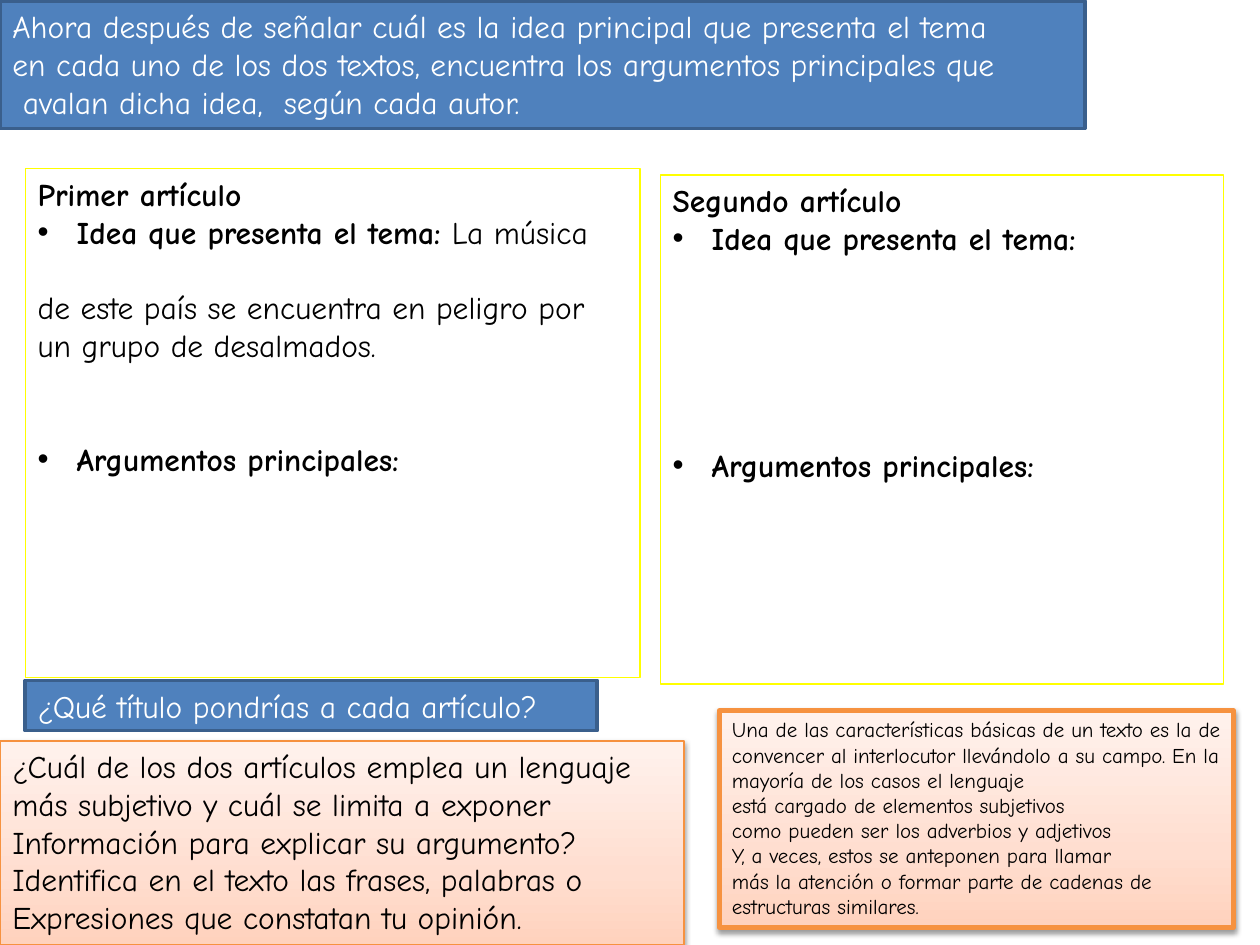
from dataclasses import dataclass

from lxml import etree
from copy import deepcopy
from pptx import Presentation
from pptx.dml.color import RGBColor
from pptx.enum.shapes import MSO_SHAPE
from pptx.enum.text import MSO_ANCHOR, PP_ALIGN
from pptx.oxml.ns import qn
from pptx.util import Inches, Pt

RECTANGLE = MSO_SHAPE.RECTANGLE
TOP = MSO_ANCHOR.TOP
LEFT = PP_ALIGN.LEFT


@dataclass(frozen=True)
class Theme:
    font: str = "Comic Neue"
    body: int = 18
    small: int = 12
    line_height: float = 21.6
    ink: str = "000000"
    light: str = "FFFFFF"
    blue: str = "4F81BD"
    blue_edge: str = "3A5F8C"
    yellow: str = "FFFF00"
    orange: str = "F69240"
    peach: tuple = ((0, "FFD2BD"), (0.35, "FFDED0"), (1, "FFF2ED"))


THEME = Theme()


def add_box(slide, box, edge, edge_width):
    panel = slide.shapes.add_shape(RECTANGLE, *(Inches(length) for length in box))
    panel.shadow.inherit = False
    panel.fill.background()
    panel.line.color.rgb = RGBColor.from_string(edge)
    panel.line.width = Pt(edge_width)
    panel.text_frame.word_wrap = True
    panel.text_frame.vertical_anchor = TOP
    return panel


def write(paragraph, text, size=THEME.body, color=THEME.ink, bold=False,
          bullet=False, lines_before=0):
    run = paragraph.add_run()
    run.text = text
    run.font.name = THEME.font
    run.font.size = Pt(size)
    run.font.bold = bold
    run.font.color.rgb = RGBColor.from_string(color)
    paragraph.alignment = LEFT
    if lines_before:
        paragraph.space_before = Pt(lines_before * THEME.line_height)
    if bullet:
        properties = paragraph._p.get_or_add_pPr()
        properties.set("marL", str(Inches(0.31)))
        properties.set("indent", str(-Inches(0.31)))
        etree.SubElement(properties, qn("a:buFont"), typeface="Arial")
        etree.SubElement(properties, qn("a:buChar"), char="•")


def write_lines(panel, lines, **style):
    frame = panel.text_frame
    for index, line in enumerate(lines):
        paragraph = frame.add_paragraph() if index else frame.paragraphs[0]
        write(paragraph, line, **style)


def add_shadow(panel):
    effects = panel._element.spPr.find(qn("a:effectLst"))
    shadow = etree.SubElement(
        effects, qn("a:outerShdw"), blurRad=str(Pt(3.1)), dist=str(Pt(1.6)),
        dir="5400000", rotWithShape="0")
    color = etree.SubElement(shadow, qn("a:srgbClr"), val=THEME.ink)
    etree.SubElement(color, qn("a:alpha"), val="38000")


def fill_peach(panel):
    panel.fill.gradient()
    panel.fill.gradient_angle = 90
    stop_list = panel._element.spPr.find(".//" + qn("a:gsLst"))
    stop_list.append(deepcopy(stop_list[-1]))
    for stop, (position, color) in zip(panel.fill.gradient_stops, THEME.peach):
        stop.position = position
        stop.color.rgb = RGBColor.from_string(color)


def add_banner(slide, box, lines):
    banner = add_box(slide, box, THEME.blue_edge, 2)
    banner.fill.solid()
    banner.fill.fore_color.rgb = RGBColor.from_string(THEME.blue)
    write_lines(banner, lines, color=THEME.light)


def add_article(slide, box, heading, idea="", idea_rest="", gap=5):
    article = add_box(slide, box, THEME.yellow, 0.75)
    frame = article.text_frame
    write(frame.paragraphs[0], heading, bold=True)
    topic = frame.add_paragraph()
    label = "Idea que presenta el tema:"
    write(topic, f"{label} " if idea else label, bold=True, bullet=True)
    if idea:
        write(topic, idea)
        write(frame.add_paragraph(), idea_rest, lines_before=1)
    write(frame.add_paragraph(), "Argumentos principales:", bold=True,
          bullet=True, lines_before=gap)


def add_note(slide, box, lines, edge_width, size):
    note = add_box(slide, box, THEME.orange, edge_width)
    fill_peach(note)
    add_shadow(note)
    write_lines(note, lines, size=size)


def main():
    presentation = Presentation()
    presentation.slide_width = Inches(10)
    presentation.slide_height = Inches(7.5)
    slide = presentation.slides.add_slide(presentation.slide_layouts[6])

    add_banner(slide, (0, 0.01, 8.61, 1.01), [
        "Ahora después de señalar cuál es la idea principal que presenta el tema",
        "en cada uno de los dos textos, encuentra los argumentos principales que",
        " avalan dicha idea,  según cada autor.",
    ])
    add_article(
        slide, (0.2, 1.34, 4.88, 4.04), "Primer artículo", idea="La música",
        idea_rest="de este país se encuentra en peligro por un grupo de desalmados.",
        gap=2)
    add_article(slide, (5.24, 1.39, 4.47, 4.04), "Segundo artículo")
    add_banner(slide, (0.2, 5.4, 4.54, 0.4),
               ["¿Qué título pondrías a cada artículo?"])
    add_note(slide, (0, 5.88, 5.43, 1.62), [
        "¿Cuál de los dos artículos emplea un lenguaje",
        "más subjetivo y cuál se limita a exponer",
        "Información para explicar su argumento?",
        "Identifica en el texto las frases, palabras o",
        "Expresiones que constatan tu opinión.",
    ], edge_width=0.75, size=THEME.body)
    add_note(slide, (5.71, 5.64, 4.08, 1.72), [
        "Una de las características básicas de un texto es la de convencer al "
        "interlocutor llevándolo a su campo. En la mayoría de los casos el lenguaje",
        "está cargado de elementos subjetivos",
        "como pueden ser los adverbios y adjetivos",
        "Y, a veces, estos se anteponen para llamar",
        "más la atención o formar parte de cadenas de",
        "estructuras similares.",
    ], edge_width=3, size=THEME.small)

    presentation.save("out.pptx")


if __name__ == "__main__":
    main()
